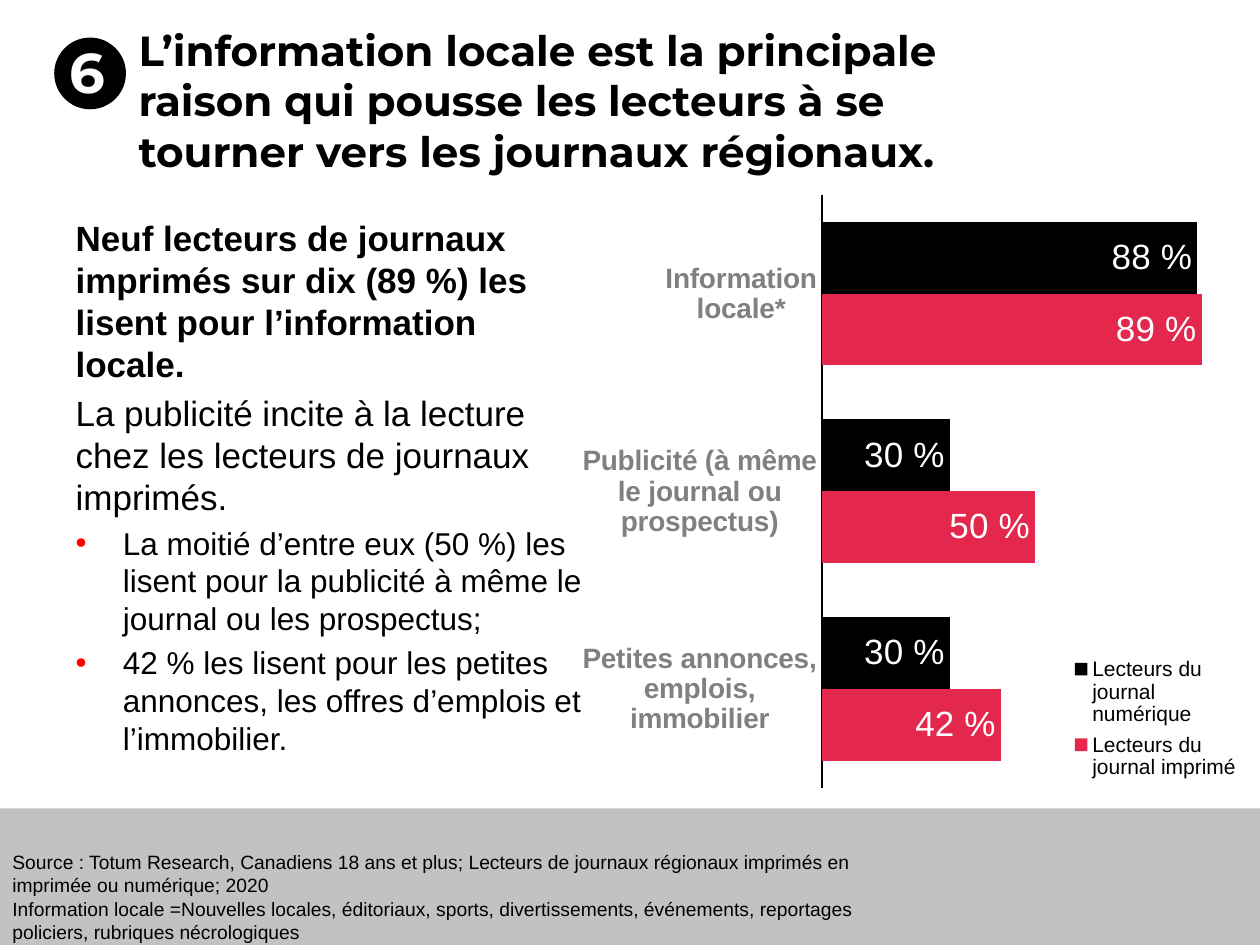
import pptx
import pptx.chart.data
import pptx.dml.color
import pptx.enum.chart
import pptx.enum.shapes
import pptx.enum.text
import pptx.oxml
import pptx.oxml.ns
import pptx.util

Pt = pptx.util.Pt
BLACK, WHITE, RED = "000000", "FFFFFF", "E4284D"
TITLE = ("L’information locale est la principale raison qui pousse les lecteurs à se\v"
         "tourner vers les journaux régionaux.")
BODY = [
    ("Neuf lecteurs de journaux imprimés sur dix (89 %) les lisent pour l’information locale.", 20, True, False),
    ("La publicité incite à la lecture chez les lecteurs de journaux imprimés.", 20, False, False),
    ("La moitié d’entre eux (50 %) les lisent pour la publicité à même le journal ou les prospectus;",
     18, False, True),
    ("42 % les lisent pour les petites annonces, les offres d’emplois et l’immobilier.", 18, False, True),
]
SOURCE = [
    "Source : Totum Research, Canadiens 18 ans et plus; Lecteurs de journaux régionaux imprimés en "
    "imprimée ou numérique; 2020",
    "Information locale =Nouvelles locales, éditoriaux, sports, divertissements, événements, reportages "
    "policiers, rubriques nécrologiques",
]
CATEGORIES = ["Petites annonces, emplois, immobilier",
              "Publicité (à même le journal ou prospectus)",
              "Information locale*"]
SERIES = [("Lecteurs du journal imprimé", (0.42, 0.5, 0.89), RED),
          ("Lecteurs du journal numérique", (0.3, 0.3, 0.88), BLACK)]


def rgb(value):
    return pptx.dml.color.RGBColor.from_string(value)


def style_font(font, size, color=BLACK, bold=False, name="Arial"):
    font.name = name
    font.size = Pt(size)
    font.bold = bold
    font.color.rgb = rgb(color)


def place(shape, left, top, width, height):
    shape.left, shape.top = Pt(left), Pt(top)
    shape.width, shape.height = Pt(width), Pt(height)


def add_filled_shape(slide, kind, color, *box):
    shape = slide.shapes.add_shape(kind, *map(Pt, box))
    shape.shadow.inherit = False
    shape.fill.solid()
    shape.fill.fore_color.rgb = rgb(color)
    shape.line.fill.background()


def add_text(slide, lines, box, **font_style):
    frame = slide.shapes.add_textbox(*map(Pt, box)).text_frame
    frame.word_wrap = True
    frame.text = "\n".join(lines)
    for paragraph in frame.paragraphs:
        style_font(paragraph.font, **font_style)


def fill_title(title):
    place(title, 72, 23, 547, 68.5)
    frame = title.text_frame
    frame.text = TITLE
    frame.auto_size = pptx.enum.text.MSO_AUTO_SIZE.NONE
    frame.vertical_anchor = pptx.enum.text.MSO_ANCHOR.MIDDLE
    frame.paragraphs[0].alignment = pptx.enum.text.PP_ALIGN.LEFT
    style_font(frame.paragraphs[0].font, 24, bold=True, name="Montserrat")


def set_bullet(paragraph, bulleted):
    properties = paragraph._p.get_or_add_pPr()
    indent = Pt(27) if bulleted else 0
    properties.set("marL", str(indent))
    properties.set("indent", str(-indent))
    namespace = pptx.oxml.ns.nsdecls("a")
    elements = [f"<a:buNone {namespace}/>"]
    if bulleted:
        elements = [f'<a:buClr {namespace}><a:srgbClr val="FF0000"/></a:buClr>',
                    f'<a:buFont {namespace} typeface="Arial"/>',
                    f'<a:buChar {namespace} char="•"/>']
    for element in elements:
        properties.append(pptx.oxml.parse_xml(element))


def fill_body(body):
    place(body, 36, 120, 309.5, 349)
    frame = body.text_frame
    frame.text = "\n".join(line[0] for line in BODY)
    frame.auto_size = pptx.enum.text.MSO_AUTO_SIZE.NONE
    for index, (paragraph, line) in enumerate(zip(frame.paragraphs, BODY)):
        text, size, bold, bulleted = line
        set_bullet(paragraph, bulleted)
        paragraph.space_before = Pt(0.2 * size if index else 0)
        style_font(paragraph.font, size, bold=bold)


def set_layout(parent, left, top, width, height, inner=False):
    target = '<c:layoutTarget val="inner"/>' if inner else ""
    values = "".join(f'<c:{tag} val="{value}"/>'
                     for tag, value in zip("xywh", (left, top, width, height)))
    layout = pptx.oxml.parse_xml(
        f'<c:layout {pptx.oxml.ns.nsdecls("c")}><c:manualLayout>{target}'
        f'<c:xMode val="edge"/><c:yMode val="edge"/>{values}</c:manualLayout></c:layout>')
    for old in parent.findall(pptx.oxml.ns.qn("c:layout")):
        parent.remove(old)
    position = 1 if parent.tag == pptx.oxml.ns.qn("c:legend") else 0
    parent.insert(position, layout)


def style_axes(chart):
    values = chart.value_axis
    values.minimum_scale, values.maximum_scale = 0, 1
    values.has_major_gridlines = False
    values.visible = False
    categories = chart.category_axis
    categories.major_tick_mark = pptx.enum.chart.XL_TICK_MARK.NONE
    categories.format.line.color.rgb = rgb(BLACK)
    categories.format.line.width = Pt(0.75)
    style_font(categories.tick_labels.font, 16, "808080", True)


def style_series(series, color):
    series.format.fill.solid()
    series.format.fill.fore_color.rgb = rgb(color)
    series.invert_if_negative = False
    labels = series.data_labels
    labels.show_value = True
    labels.number_format = '0" "%'
    labels.number_format_is_linked = False
    labels.position = pptx.enum.chart.XL_LABEL_POSITION.INSIDE_END
    style_font(labels.font, 20, WHITE)


def add_reasons_chart(slide):
    data = pptx.chart.data.CategoryChartData(number_format="0%")
    data.categories = CATEGORIES
    for name, values, color in SERIES:
        data.add_series(name, values)
    box = map(Pt, (332.5, 111, 381, 342.5))
    chart = slide.shapes.add_chart(pptx.enum.chart.XL_CHART_TYPE.BAR_CLUSTERED, *box, data).chart
    chart.has_title = False
    style_font(chart.font, 13.5)
    style_axes(chart)
    plot = chart.plots[0]
    plot.gap_width = 75
    plot.vary_by_categories = False
    for series, (name, values, color) in zip(plot.series, SERIES):
        style_series(series, color)
    chart.has_legend = True
    chart.legend.position = pptx.enum.chart.XL_LEGEND_POSITION.RIGHT
    chart.legend.include_in_layout = False
    style_font(chart.legend.font, 12)
    set_layout(chart.legend._element, 0.74, 0.76, 0.25, 0.23)
    set_layout(chart._chartSpace.chart.plotArea, 0.36, 0, 0.64, 0.99, inner=True)


def main():
    presentation = pptx.Presentation()
    presentation.slide_width, presentation.slide_height = Pt(720), Pt(540)
    slide = presentation.slides.add_slide(presentation.slide_layouts[1])
    shapes = pptx.enum.shapes.MSO_SHAPE
    add_filled_shape(slide, shapes.RECTANGLE, "C2C2C2", 0, 462, 720, 78)
    fill_title(slide.shapes.title)
    add_reasons_chart(slide)
    add_text(slide, SOURCE, (0, 482.5, 528, 60.5), size=11)
    fill_body(slide.placeholders[1])
    add_filled_shape(slide, shapes.OVAL, BLACK, 31, 21.5, 41, 41)
    add_text(slide, ["6"], (32.5, 18, 47.5, 46), size=32, color=WHITE, bold=True, name="Montserrat")
    presentation.save("out.pptx")


if __name__ == "__main__":
    main()
